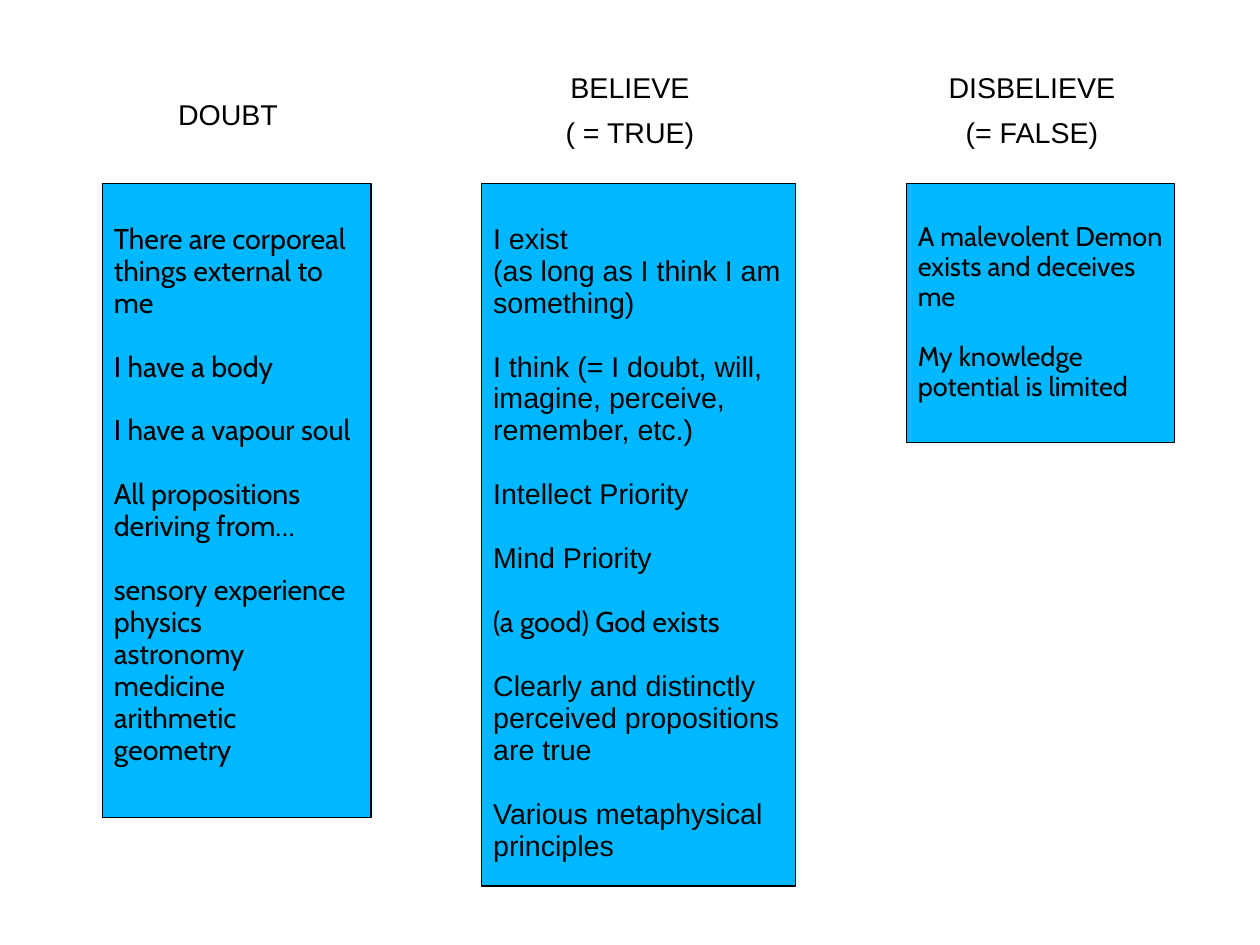
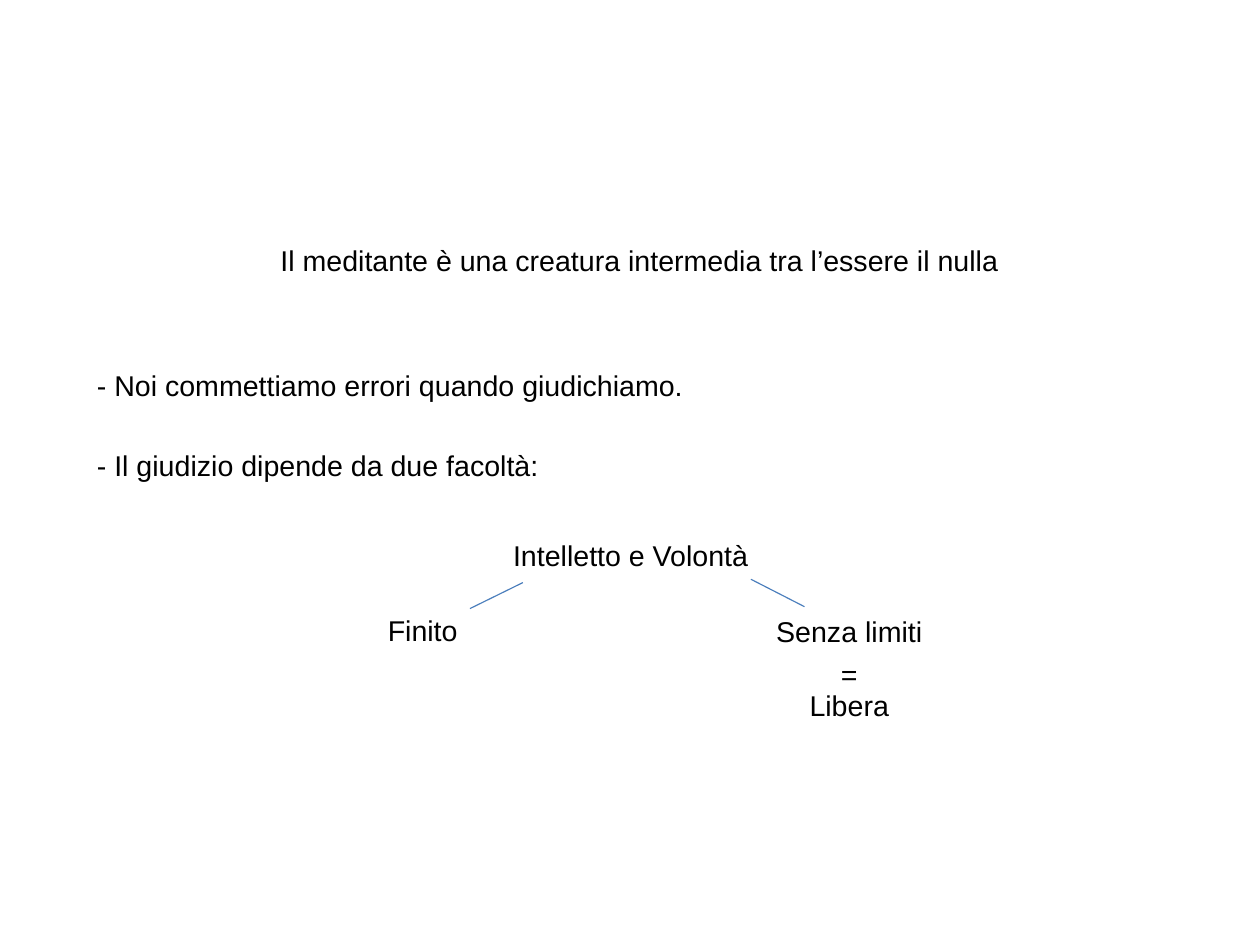
from pptx import Presentation
from pptx.dml.color import RGBColor
from pptx.enum.shapes import MSO_CONNECTOR, MSO_SHAPE
from pptx.enum.text import MSO_ANCHOR, MSO_AUTO_SIZE, PP_ALIGN
from pptx.oxml.ns import qn
from pptx.util import Cm, Inches, Pt
from lxml import etree

BLACK = RGBColor(0x00, 0x00, 0x00)
SKY = RGBColor(0x00, 0xB8, 0xFF)
STEEL = RGBColor(0x4B, 0x7E, 0xBC)
RECTANGLE = MSO_SHAPE.RECTANGLE
STRAIGHT = MSO_CONNECTOR.STRAIGHT
TOP = MSO_ANCHOR.TOP
FIXED = MSO_AUTO_SIZE.NONE
LEFT, CENTER = PP_ALIGN.LEFT, PP_ALIGN.CENTER

ARIAL, CABIN = "Arial", "Cabin"
TITLE_ONLY, BLANK = 5, 6
LINE_SPACING = 0.93
LINE_PITCH = 1.12
ROW = 4.6


class Deck:
    def __init__(self):
        self.prs = Presentation()
        self.prs.slide_width = Cm(28)
        self.prs.slide_height = Cm(21)

    def add_slide(self, layout):
        self.slide = self.prs.slides.add_slide(self.prs.slide_layouts[layout])

    def x(self, percent):
        return round(self.prs.slide_width * percent / 100)

    def y(self, percent):
        return round(self.prs.slide_height * percent / 100)

    def area(self, left, top, width, height):
        return self.x(left), self.y(top), self.x(width), self.y(height)

    def format(self, paragraph, align, size=18, font=ARIAL):
        paragraph.alignment = align
        paragraph.line_spacing = LINE_SPACING
        for run in paragraph.runs:
            run.font.size = Pt(size)
            run.font.name = font
            run.font.color.rgb = BLACK

    def fill_frame(self, frame, text, align, wrap=True):
        frame.text = text
        frame.word_wrap = wrap
        frame.auto_size = FIXED
        frame.vertical_anchor = TOP
        for paragraph in frame.paragraphs:
            self.format(paragraph, align)

    def title(self, text, left, top, width):
        heading = self.slide.shapes.title
        heading.left, heading.top, heading.width, heading.height = self.area(left, top, width, ROW)
        self.fill_frame(heading.text_frame, text, CENTER)

    def statement(self, text, left, top, width):
        box = self.slide.shapes.add_textbox(*self.area(left, top, width, ROW))
        self.fill_frame(box.text_frame, text, LEFT)

    def label(self, text, center, top, width, height=ROW):
        box = self.slide.shapes.add_textbox(*self.area(center - width / 2, top, width, height))
        self.fill_frame(box.text_frame, text, CENTER, wrap=False)

    def panel(self, groups, center, top, width, height, size):
        box = self.slide.shapes.add_shape(
            RECTANGLE, *self.area(center - width / 2, top, width, height))
        box.shadow.inherit = False
        box.fill.solid()
        box.fill.fore_color.rgb = SKY
        box.line.color.rgb = BLACK
        box.line.width = Pt(0.75)
        frame = box.text_frame
        frame.word_wrap = True
        frame.vertical_anchor = TOP
        gap = Pt(size * LINE_PITCH)
        frame.margin_top = Inches(0.07) + gap
        frame.text = "\n".join(line for _, lines in groups for line in lines)
        paragraphs = iter(frame.paragraphs)
        for number, (font, lines) in enumerate(groups):
            for position in range(len(lines)):
                paragraph = next(paragraphs)
                self.format(paragraph, LEFT, size, font)
                if number and position == 0:
                    paragraph.space_before = gap

    def branch(self, x1, y1, x2, y2):
        line = self.slide.shapes.add_connector(
            STRAIGHT, self.x(x1), self.y(y1), self.x(x2), self.y(y2))
        line.line.color.rgb = STEEL
        line.line.width = Pt(0.75)
        etree.SubElement(line._element.spPr, qn("a:effectLst"))


DOUBTS = [
    (CABIN, ["There are corporeal things external to me"]),
    (CABIN, ["I have a body"]),
    (CABIN, ["I have a vapour soul"]),
    (CABIN, ["All propositions deriving from…"]),
    (CABIN, ["sensory experience", "physics", "astronomy",
             "medicine", "arithmetic", "geometry"]),
]
BELIEFS = [
    (ARIAL, ["I exist", "(as long as I think I am something)"]),
    (ARIAL, ["I think (= I doubt, will, imagine, perceive, remember, etc.)"]),
    (ARIAL, ["Intellect Priority"]),
    (ARIAL, ["Mind Priority"]),
    (CABIN, ["(a good) God exists"]),
    (ARIAL, ["Clearly and distinctly perceived propositions are true"]),
    (ARIAL, ["Various metaphysical", "principles"]),
]
DISBELIEFS = [
    (CABIN, ["A malevolent Demon exists and deceives me"]),
    (CABIN, ["My knowledge potential is limited"]),
]
COLUMNS = [
    ([("DOUBT", 9.95, 9.9)], DOUBTS, 21.3, 67.1, 18),
    ([("BELIEVE", 7.1, 11.3), ("( = TRUE)", 11.85, 12.2)], BELIEFS, 24.9, 74.3, 18),
    ([("DISBELIEVE", 7.1, 15.2), ("(= FALSE)", 11.85, 12.4)], DISBELIEFS, 21.3, 27.4, 17),
]
FIRST_CENTER, COLUMN_STEP = 18.8, 31.9
HEADING_SHIFT = 0.7
PANEL_TOP = 19.45


def build_beliefs(deck):
    deck.add_slide(BLANK)
    for index, (headings, groups, width, height, size) in enumerate(COLUMNS):
        center = FIRST_CENTER + index * COLUMN_STEP
        deck.panel(groups, center, PANEL_TOP, width, height, size)
        for text, top, heading_width in headings:
            deck.label(text, center - HEADING_SHIFT, top, heading_width)


def build_judgement(deck):
    deck.add_slide(TITLE_ONLY)
    deck.title("Il meditante è una creatura intermedia tra l’essere il nulla", 13.85, 25.4, 73.8)
    deck.statement("- Noi commettiamo errori quando giudichiamo.", 6.8, 38.65, 73.8)
    deck.statement("- Il giudizio dipende da due facoltà:", 6.8, 47.1, 50)
    deck.label("Intelletto e Volontà", 50.05, 56.7, 20.7)
    deck.label("Finito", 33.55, 64.55, 7.4)
    deck.label("Senza limiti", 67.4, 64.65, 13.5)
    deck.label("=\nLibera", 67.4, 69.2, 8.2, 8)
    deck.branch(37.3, 64.4, 41.5, 61.65)
    deck.branch(59.6, 61.3, 63.85, 64.2)


def main():
    deck = Deck()
    build_beliefs(deck)
    build_judgement(deck)
    deck.prs.save("out.pptx")


if __name__ == "__main__":
    main()
